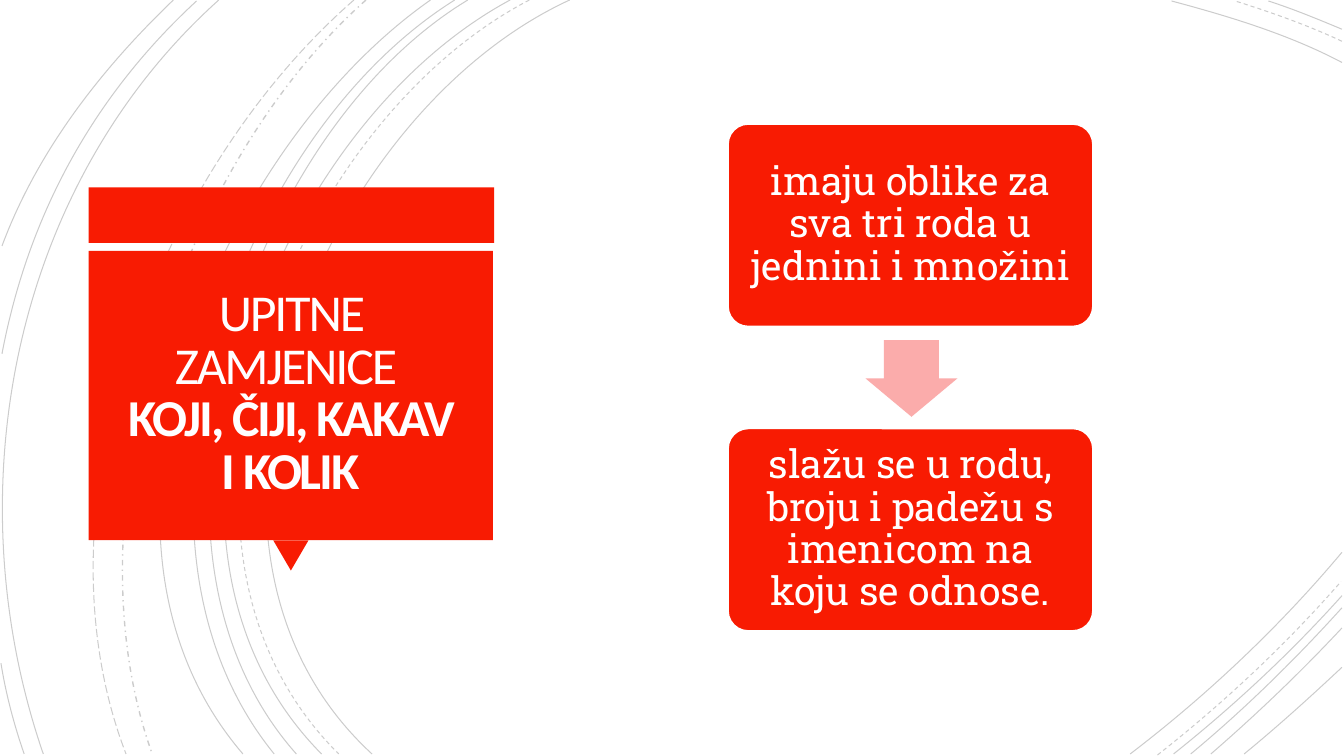
from lxml.etree import SubElement
from pptx import Presentation
from pptx.dml.color import RGBColor
from pptx.enum.dml import MSO_LINE as Dash
from pptx.enum.shapes import MSO_SHAPE as Kind
from pptx.enum.text import MSO_ANCHOR as Anchor, MSO_AUTO_SIZE as Fit, PP_ALIGN as Align
from pptx.oxml.ns import qn
from pptx.util import Pt

PX = 9144  # 100 px to the inch
RED = RGBColor(0xF8, 0x1B, 0x02)
PINK = RGBColor(0xFB, 0xAC, 0xAB)
WHITE = RGBColor(0xFF, 0xFF, 0xFF)
SNOW = RGBColor(0xFF, 0xFE, 0xFF)
BLACK = RGBColor(0, 0, 0)

# Each arc: start, two control points, end
SOLID = [
    (565, 0, 315, 115, 143, 540, 369, 748),
    (1331, 62, 1278, 34, 1218, 16, 1162, 1),
    (1121, 748, 1197, 690, 1269, 622, 1331, 548),
    (506, 0, 270, 127, 110, 537, 319, 748),
    (1331, 29, 1307, 19, 1283, 9, 1258, 1),
    (1164, 748, 1223, 701, 1280, 648, 1331, 591),
    (464, 0, 244, 133, 110, 541, 294, 748),
    (1181, 748, 1234, 704, 1284, 655, 1331, 603),
    (451, 0, 231, 138, 97, 533, 272, 748),
    (1201, 748, 1246, 709, 1290, 667, 1331, 623),
    (427, 0, 217, 147, 53, 529, 241, 748),
    (1234, 748, 1267, 721, 1299, 692, 1331, 662),
    (217, 0, 11, 185, -46, 490, 43, 748),
    (195, 1, 92, 96, 28, 214, 2, 351),
    (1, 658, 6, 689, 14, 719, 24, 748),
    (172, 0, 100, 69, 37, 150, 2, 244),
]
DASHED = [
    (525, 0, 285, 125, 123, 537, 336, 748),
    (1331, 41, 1297, 25, 1260, 12, 1225, 1),
    (1148, 749, 1213, 698, 1275, 640, 1330, 577),
]
DOTTED = [(363, 0, 176, 166, 65, 509, 151, 748)]
LONG = [(351, 0, 157, 169, 29, 499, 125, 748)]
ARCS = [(SOLID, Dash.SOLID, 0.75), (DASHED, Dash.DASH, 0.75),
        (DOTTED, Dash.DASH_DOT, 1), (LONG, Dash.LONG_DASH, 0.75)]

CARDS = [
    (123, "imaju oblike za sva tri roda u jednini i množini"),
    (425, "slažu se u rodu, broju i padežu s imenicom na koju se odnose."),
]


def put(item, style):
    for name, value in style.items():
        setattr(item, name, value)


class Deck:
    head = dict(name="Calibri", size=Pt(37))
    body = dict(name="Roboto Slab", size=Pt(28), bold=False)

    def __init__(self):
        self.prs = Presentation()
        put(self.prs, dict(slide_width=1333 * PX, slide_height=750 * PX))
        self.slide = self.prs.slides.add_slide(self.prs.slide_layouts[5])
        self.shapes = self.slide.shapes

    def arc(self, pts, dash, width):
        """Draw one open cubic curve in faint black."""
        start, *rest = zip(pts[::2], pts[1::2])
        form = self.shapes.build_freeform(*start, scale=PX)
        form.add_line_segments(rest, close=False)
        arc = form.convert_to_shape()
        arc.shadow.inherit = False
        arc.fill.background()
        arc.line.color.rgb = BLACK
        put(arc.line, dict(width=Pt(width), dash_style=dash))
        props = arc._element.spPr
        SubElement(next(props.iter(qn("a:srgbClr"))), qn("a:alpha"), val="20000")
        legs = list(props.iter(qn("a:lnTo")))
        curve = SubElement(legs[0].getparent(), qn("a:cubicBezTo"))
        for leg in legs:
            curve.append(leg[0])
            leg.getparent().remove(leg)

    def shape(self, kind, box, fill=RED, turn=0, adj=()):
        item = self.shapes.add_shape(kind, *(n * PX for n in box))
        item.shadow.inherit = False
        item.fill.solid()
        item.fill.fore_color.rgb = fill
        item.line.fill.background()
        item.rotation = turn
        for i, value in enumerate(adj):
            item.adjustments[i] = value
        return item

    def frame(self, item, pad, gap):
        """Format the text frame and return its first paragraph."""
        frame = item.text_frame
        put(frame, dict(word_wrap=True, auto_size=Fit.NONE,
                        vertical_anchor=Anchor.MIDDLE))
        sides = ("left", "right", "top", "bottom")
        put(frame, {f"margin_{side}": pad * PX for side in sides})
        para = frame.paragraphs[0]
        put(para, dict(alignment=Align.CENTER, line_spacing=gap))
        return para

    def run(self, para, text, style, color):
        run = para.add_run()
        run.text = text
        put(run.font, style)
        run.font.color.rgb = color
        return run

    def card(self, top, text):
        card = self.shape(Kind.ROUNDED_RECTANGLE, (722, top, 362, 201), adj=[0.1])
        card.line.color.rgb = WHITE
        card.line.width = Pt(1.25)
        self.run(self.frame(card, 12, 0.9), text, self.body, WHITE)

    def title(self, box, plain, strong):
        title = self.shapes.title
        self.shapes._spTree.append(title._element)  # bring to front
        put(title, dict(zip(("left", "top", "width", "height"),
                            (n * PX for n in box))))
        para = self.frame(title, 25, 0.85)
        first = self.run(para, plain, dict(self.head, bold=False), SNOW)
        para.add_line_break()
        last = self.run(para, strong, dict(self.head, bold=True), SNOW)
        for run in (first, last):
            run.font._element.set("spc", "-150")


def main():
    deck = Deck()
    for arcs, dash, width in ARCS:
        for pts in arcs:
            deck.arc(pts, dash, width)
    deck.shape(Kind.RECTANGLE, (88, 186, 402, 55))
    deck.shape(Kind.ISOSCELES_TRIANGLE, (271, 536, 35, 30), turn=180)
    deck.shape(Kind.RECTANGLE, (88, 249, 401, 287))
    deck.title((97, 257, 383, 269), "UPITNE ZAMJENICE ", "KOJI, ČIJI, KAKAV I KOLIK")
    for top, text in CARDS:
        deck.card(top, text)
    deck.shape(Kind.RIGHT_ARROW, (866, 330, 76, 91), PINK, 90, (0.6, 0.5))
    deck.prs.save("out.pptx")


if __name__ == "__main__":
    main()
